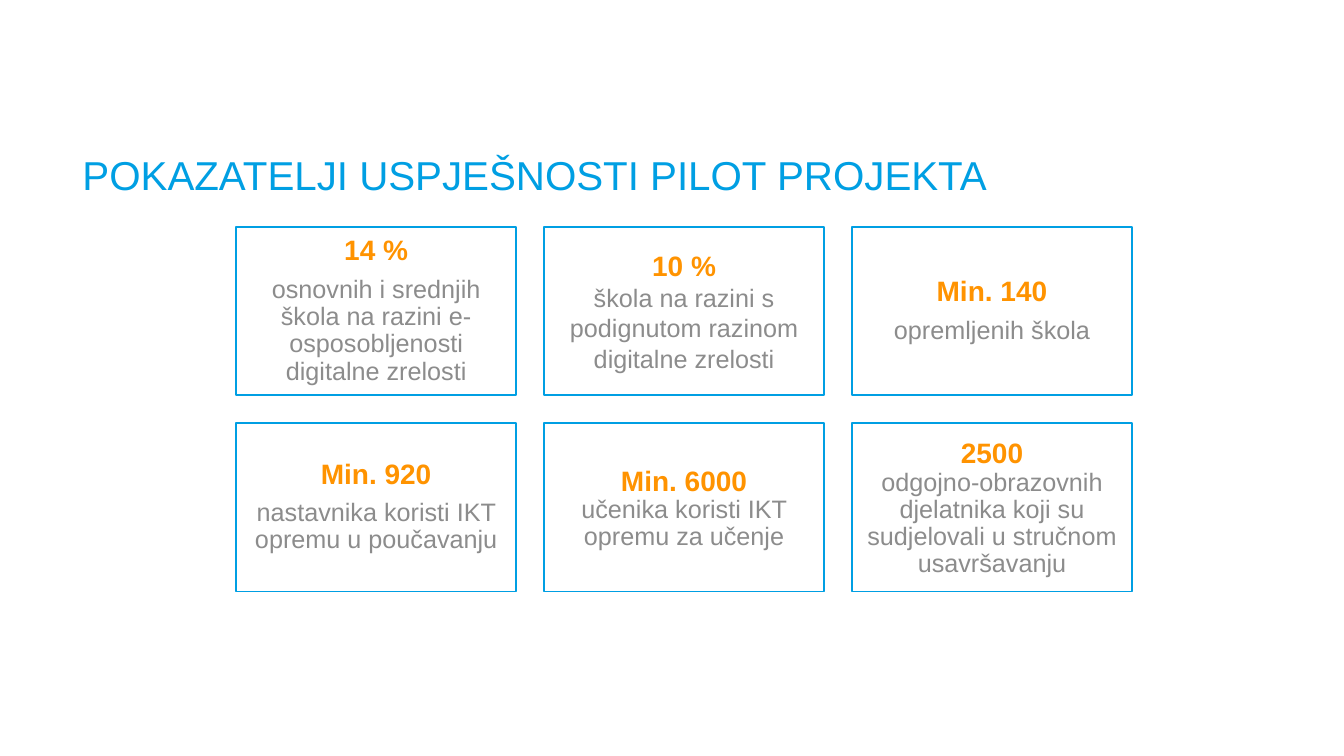
import pptx
import pptx.util
import pptx.dml.color
import pptx.enum.shapes
import pptx.enum.text

Cm, Pt = pptx.util.Cm, pptx.util.Pt
ALIGN = pptx.enum.text.PP_ALIGN
ANCHOR = pptx.enum.text.MSO_ANCHOR
RECT = pptx.enum.shapes.MSO_SHAPE.RECTANGLE


def color(code):
    return pptx.dml.color.RGBColor.from_string(code)


class Deck:
    blue, gold, gray, white = "009FE3", "FF9300", "8C8C8C", "FFFFFF"
    face = "Arial"

    def __init__(self):
        self.prs = pptx.Presentation()
        self.prs.slide_width, self.prs.slide_height = Cm(33.87), Cm(19.05)
        self.slide = self.prs.slides.add_slide(self.prs.slide_layouts[6])

    def frame(self, shape, anchor, inset):
        frame = shape.text_frame
        form = {"word_wrap": True, "vertical_anchor": anchor}
        for side in ("left", "top", "right", "bottom"):
            form["margin_" + side] = Cm(inset)
        for name, value in form.items():
            setattr(frame, name, value)
        return frame

    def line(self, para, text, size, ink, bold=False, tight=True,
             after=0.0, align=ALIGN.CENTER):
        run = para.add_run()
        run.text = text
        form = {"alignment": align, "line_spacing": 0.9 if tight else 1.0,
                "space_before": Pt(0), "space_after": Pt(after)}
        for name, value in form.items():
            setattr(para, name, value)
        for name, value in {"name": self.face, "size": Pt(size),
                            "bold": bold}.items():
            setattr(run.font, name, value)
        run.font.color.rgb = color(ink)

    def title(self, text, left, top, width, height):
        box = self.slide.shapes.add_textbox(
            Cm(left), Cm(top), Cm(width), Cm(height))
        frame = self.frame(box, ANCHOR.BOTTOM, 0.25)
        frame.margin_top = frame.margin_bottom = Cm(0.13)
        self.line(frame.paragraphs[0], text, 28.8, self.blue,
                  align=ALIGN.LEFT)

    def card(self, left, top, width, height, head, body, tight):
        box = self.slide.shapes.add_shape(
            RECT, Cm(left), Cm(top), Cm(width), Cm(height))
        box.shadow.inherit = False
        box.fill.solid()
        box.fill.fore_color.rgb = color(self.white)
        box.line.color.rgb = color(self.blue)
        box.line.width = Pt(1)
        frame = self.frame(box, ANCHOR.MIDDLE, 0.2)
        lines = ((head, 20, self.gold, True, tight[0]),
                 (body, 18, self.gray, False, tight[1]))
        for i, (text, size, ink, bold, snug) in enumerate(lines):
            para = frame.add_paragraph() if i else frame.paragraphs[0]
            self.line(para, text, size, ink, bold, snug,
                      0.35 * size if snug else 0)


# Figure, label, and whether each of the two is set tight
CARDS = [
    ("14 %", "osnovnih i srednjih škola na razini e-osposobljenosti "
     "digitalne zrelosti", (True, True)),
    ("10 %", "škola na razini s podignutom razinom digitalne zrelosti",
     (False, False)),
    ("Min. 140", "opremljenih škola", (True, True)),
    ("Min. 920", "nastavnika koristi IKT opremu u poučavanju", (True, True)),
    ("Min. 6000", "učenika koristi IKT opremu za učenje", (False, True)),
    ("2500", "odgojno-obrazovnih djelatnika koji su sudjelovali u stručnom "
     "usavršavanju", (False, True)),
]


def main():
    deck = Deck()
    # Heading
    deck.title("POKAZATELJI USPJEŠNOSTI PILOT PROJEKTA",
               1.83, 3.68, 29.21, 1.47)
    # Grid of cards, three in a row
    wide, high, gap = 7.06, 4.24, 0.7
    for i, (head, body, tight) in enumerate(CARDS):
        row, col = divmod(i, 3)
        deck.card(5.95 + col * (wide + gap), 5.72 + row * (high + gap),
                  wide, high, head, body, tight)
    deck.prs.save("out.pptx")


if __name__ == "__main__":
    main()
